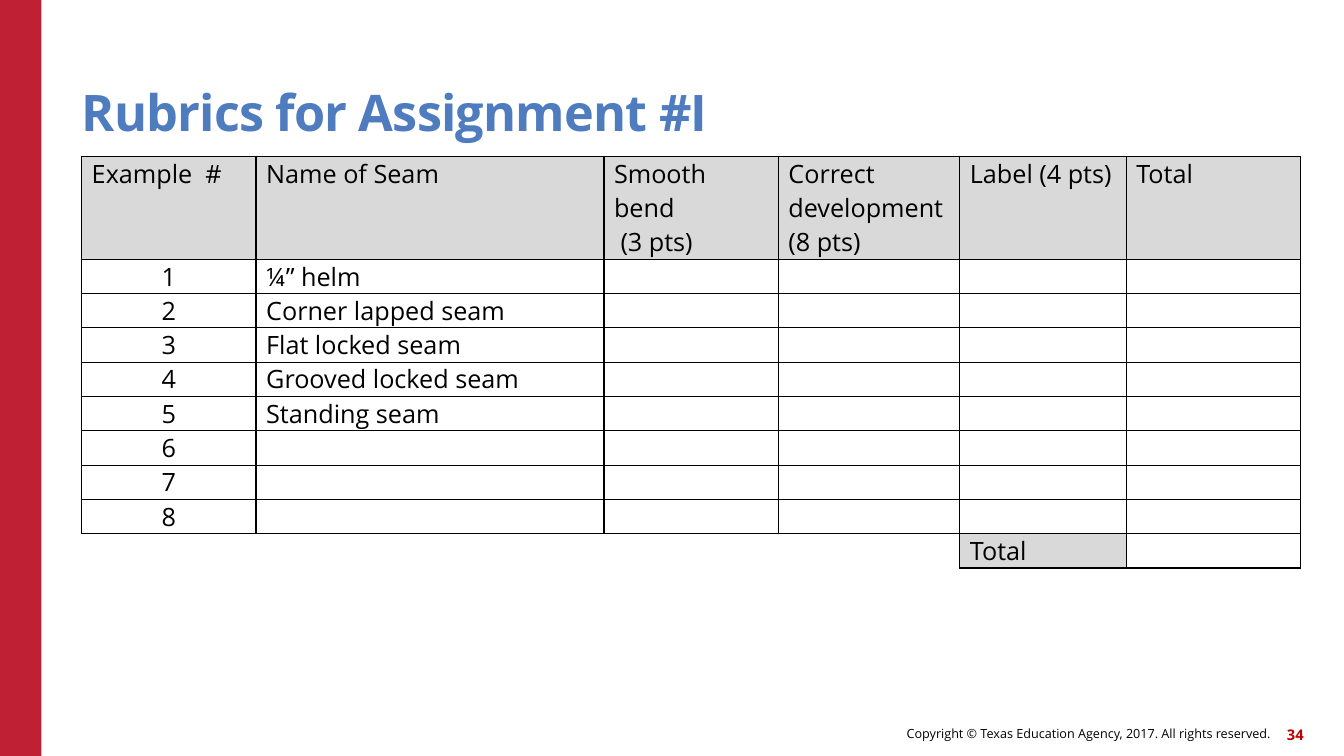
from dataclasses import dataclass

import pptx
import pptx.dml.color
import pptx.enum.shapes
import pptx.enum.text
import pptx.oxml
import pptx.oxml.ns
import pptx.util

RGBColor = pptx.dml.color.RGBColor
Align = pptx.enum.text.PP_ALIGN
Anchor = pptx.enum.text.MSO_ANCHOR

PX = pptx.util.Inches(1) // 100  # 100 px to the inch
FONT = "Open Sans"
BLACK = RGBColor(0x00, 0x00, 0x00)
BAR_RED = RGBColor(0xC0, 0x20, 0x33)
NUMBER_RED = RGBColor(0xC0, 0x00, 0x00)
TITLE_BLUE = RGBColor(0x4E, 0x7C, 0xBE)
HEADER_GREY = RGBColor(0xD9, 0xD9, 0xD9)


@dataclass(frozen=True)
class Box:
    left: int
    top: int
    width: int
    height: int

    def emu(self) -> tuple[int, int, int, int]:
        return self.left * PX, self.top * PX, self.width * PX, self.height * PX


@dataclass(frozen=True)
class FooterText:
    text: str
    box: Box
    size: float
    color: RGBColor
    bold: bool = False


@dataclass(frozen=True)
class Column:
    heading: str
    width: int


FOOTERS = [
    FooterText("Copyright © Texas Education Agency, 2017. All rights reserved.",
               Box(614, 712, 646, 32), 9, BLACK),
    FooterText("34", Box(1251, 713, 42, 32), 10.5, NUMBER_RED, bold=True),
]
COLUMNS = [
    Column("Example  #", 173),
    Column("Name of Seam", 345),
    Column("Smooth bend\n (3 pts)", 173),
    Column("Correct development\n(8 pts)", 180),
    Column("Label (4 pts)", 165),
    Column("Total", 173),
]
SEAMS = ["¼” helm", "Corner lapped seam", "Flat locked seam",
         "Grooved locked seam", "Standing seam", "", "", ""]
HEADER_HEIGHT, ROW_HEIGHT = 98, 33
TOTAL_LABEL_COLUMN = 4


def write(frame, text: str, *, size: float = 18, color: RGBColor = BLACK,
          bold: bool = False, align=Align.LEFT, line_spacing: float = 1.0,
          letter_spacing: float = 0) -> None:
    """Fill a text frame, one paragraph per line of text."""
    for index, line in enumerate(text.split("\n")):
        paragraph = frame.add_paragraph() if index else frame.paragraphs[0]
        paragraph.alignment = align
        paragraph.line_spacing = line_spacing
        run = paragraph.add_run()
        run.text = line
        run.font.name = FONT
        run.font.size = pptx.util.Pt(size)
        run.font.bold = bold
        run.font.color.rgb = color
        if letter_spacing:
            run.font._element.set("spc", str(round(letter_spacing * 100)))


def prepare_frame(frame, anchor) -> None:
    frame.margin_left = frame.margin_right = 0
    frame.margin_top = frame.margin_bottom = 0
    frame.word_wrap = True
    frame.auto_size = pptx.enum.text.MSO_AUTO_SIZE.NONE
    frame.vertical_anchor = anchor


def set_borders(cell, sides: str) -> None:
    """Draw the named sides (from LRTB) in black and clear the others."""
    properties = cell._tc.get_or_add_tcPr()
    for position, side in enumerate("LRTB"):
        paint = (f'<a:solidFill><a:srgbClr val="{BLACK}"/></a:solidFill>'
                 if side in sides else "<a:noFill/>")
        properties.insert(position, pptx.oxml.parse_xml(
            f'<a:ln{side} {pptx.oxml.ns.nsdecls("a")} w="{pptx.util.Pt(1)}">'
            f"{paint}</a:ln{side}>"))


def style_cell(cell, text: str, shaded: bool, sides: str, align=Align.LEFT) -> None:
    cell.margin_left = cell.margin_right = 10 * PX
    cell.margin_top = cell.margin_bottom = 0
    if shaded:
        cell.fill.solid()
        cell.fill.fore_color.rgb = HEADER_GREY
    else:
        cell.fill.background()
    set_borders(cell, sides)
    if text:
        write(cell.text_frame, text, align=align)


def add_rubric(slide) -> None:
    scores = [""] * (len(COLUMNS) - 2)
    rows = [[column.heading for column in COLUMNS]]
    rows += [[str(number), seam, *scores] for number, seam in enumerate(SEAMS, 1)]
    rows.append(["Total" if i == TOTAL_LABEL_COLUMN else "" for i in range(len(COLUMNS))])
    total_row = len(rows) - 1

    box = Box(81, 155, sum(column.width for column in COLUMNS),
              HEADER_HEIGHT + ROW_HEIGHT * total_row)
    rubric = slide.shapes.add_table(len(rows), len(COLUMNS), *box.emu()).table
    rubric.first_row = rubric.horz_banding = False
    for i, column in enumerate(COLUMNS):
        rubric.columns[i].width = column.width * PX
    for r, texts in enumerate(rows):
        rubric.rows[r].height = (ROW_HEIGHT if r else HEADER_HEIGHT) * PX
        for c, text in enumerate(texts):
            sides = "LRTB"
            if r == total_row and c < TOTAL_LABEL_COLUMN:
                sides = "TR" if c == TOTAL_LABEL_COLUMN - 1 else "T"
            shaded = r == 0 or (r == total_row and c == TOTAL_LABEL_COLUMN)
            align = Align.CENTER if c == 0 and r else Align.LEFT
            style_cell(rubric.cell(r, c), text, shaded, sides, align)


def main() -> None:
    deck = pptx.Presentation()
    deck.slide_width, deck.slide_height = 1333 * PX, 750 * PX
    slide = deck.slides.add_slide(deck.slide_layouts[5])

    # Side bar
    side_bar = slide.shapes.add_shape(
        pptx.enum.shapes.MSO_SHAPE.RECTANGLE, *Box(0, 0, 41, 750).emu())
    side_bar.shadow.inherit = False
    side_bar.fill.solid()
    side_bar.fill.fore_color.rgb = BAR_RED
    side_bar.line.fill.background()

    # Copyright line and slide number
    for footer in FOOTERS:
        frame = slide.shapes.add_textbox(*footer.box.emu()).text_frame
        prepare_frame(frame, Anchor.MIDDLE)
        write(frame, footer.text, size=footer.size, color=footer.color,
              bold=footer.bold, align=Align.RIGHT)

    # Title
    title = slide.shapes.title
    title.left, title.top, title.width, title.height = Box(81, 45, 1100, 96).emu()
    prepare_frame(title.text_frame, Anchor.BOTTOM)
    write(title.text_frame, "Rubrics for Assignment #I", size=36, color=TITLE_BLUE,
          bold=True, line_spacing=0.9, letter_spacing=-0.6)

    # Rubric table
    add_rubric(slide)
    deck.save("out.pptx")


if __name__ == "__main__":
    main()
